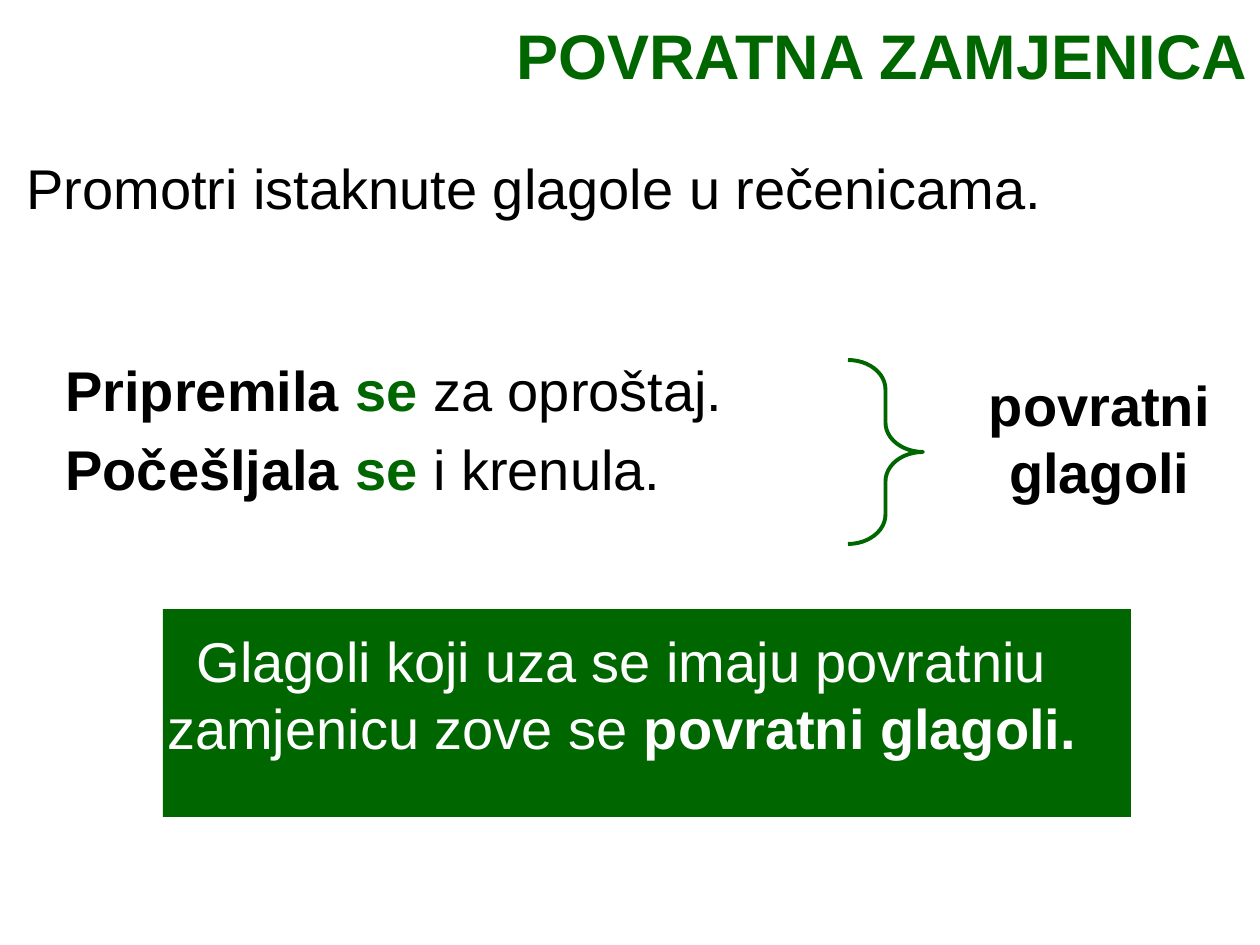
from dataclasses import dataclass

from pptx import Presentation, util as u
from pptx.dml.color import RGBColor
from pptx.enum import shapes, text

PX = u.Inches(1) / 126


@dataclass(frozen=True)
class Theme:
    font: str = "Arial"
    green: str = "006600"
    black: str = "000000"
    white: str = "FFFFFF"
    title: int = 36
    body: int = 32


THEME = Theme()
ALIGN, ANCHOR = text.PP_ALIGN, text.MSO_ANCHOR


def emu(*lengths):
    return [round(length * PX) for length in lengths]


def rgb(colour):
    return RGBColor.from_string(colour)


def add_text(slide, box, runs, size=THEME.body, align=ALIGN.LEFT,
             anchor=ANCHOR.TOP, spacing=1.0):
    """Place one paragraph; each run is (words, colour, bold)."""
    frame = slide.shapes.add_textbox(*emu(*box)).text_frame
    frame.word_wrap = True
    frame.vertical_anchor = anchor
    paragraph = frame.paragraphs[0]
    paragraph.alignment = align
    paragraph.line_spacing = spacing
    for words, colour, bold in runs:
        run = paragraph.add_run()
        run.text = words
        run.font.name = THEME.font
        run.font.size = u.Pt(size)
        run.font.bold = bold
        run.font.color.rgb = rgb(colour)


def add_heading(slide, box):
    left, top, width, height = box
    add_text(slide, (left + 281, top, width - 281, 96),
             [("POVRATNA ZAMJENICA", THEME.green, True)],
             size=THEME.title, align=ALIGN.RIGHT, anchor=ANCHOR.BOTTOM, spacing=0.9)
    add_text(slide, (left + 14, top + 134, width + 6, 91),
             [("Promotri istaknute glagole u rečenicama.", THEME.black, False)],
             spacing=1.15)


def add_examples(slide, box):
    """Stack the example sentences and bracket them with their shared name."""
    left, top, width, height = box
    sentences = [("Pripremila ", "za oproštaj."), ("Počešljala ", "i krenula.")]
    for row, (verb, ending) in enumerate(sentences):
        add_text(slide, (left, top + row * 79, width, 81),
                 [(verb, THEME.black, True), ("se ", THEME.green, True),
                  (ending, THEME.black, False)])
    add_text(slide, (left + 857, top + 15, 379, 149),
             [("povratni glagoli", THEME.black, True)], align=ALIGN.CENTER)
    brace = slide.shapes.add_shape(shapes.MSO_SHAPE.RIGHT_BRACE,
                                   *emu(left + 795, top + 11, 75, height))
    brace.adjustments[0] = 0.392
    brace.adjustments[1] = 0.5
    brace.shadow.inherit = False
    brace.fill.background()
    brace.line.color.rgb = rgb(THEME.green)
    brace.line.width = u.Pt(2.25)


def add_rule(slide, box):
    """Draw the green panel with the definition, which is centred left of it."""
    left, top, width, height = box
    panel = slide.shapes.add_shape(shapes.MSO_SHAPE.RECTANGLE, *emu(*box))
    panel.shadow.inherit = False
    panel.fill.solid()
    panel.fill.fore_color.rgb = rgb(THEME.green)
    panel.line.fill.background()
    add_text(slide, (left - 110, top + 11, width + 170, 149),
             [("Glagoli koji uza se imaju povratniu zamjenicu zove se ",
               THEME.white, False),
              ("povratni glagoli.", THEME.white, True)], align=ALIGN.CENTER)


def main():
    deck = Presentation()
    deck.slide_width, deck.slide_height = emu(1260, 945)
    slide = deck.slides.add_slide(deck.slide_layouts[6])
    add_heading(slide, (0, 3, 1260, 225))
    add_examples(slide, (53, 349, 1138, 184))
    add_rule(slide, (163, 609, 968, 208))
    deck.save("out.pptx")


if __name__ == "__main__":
    main()
